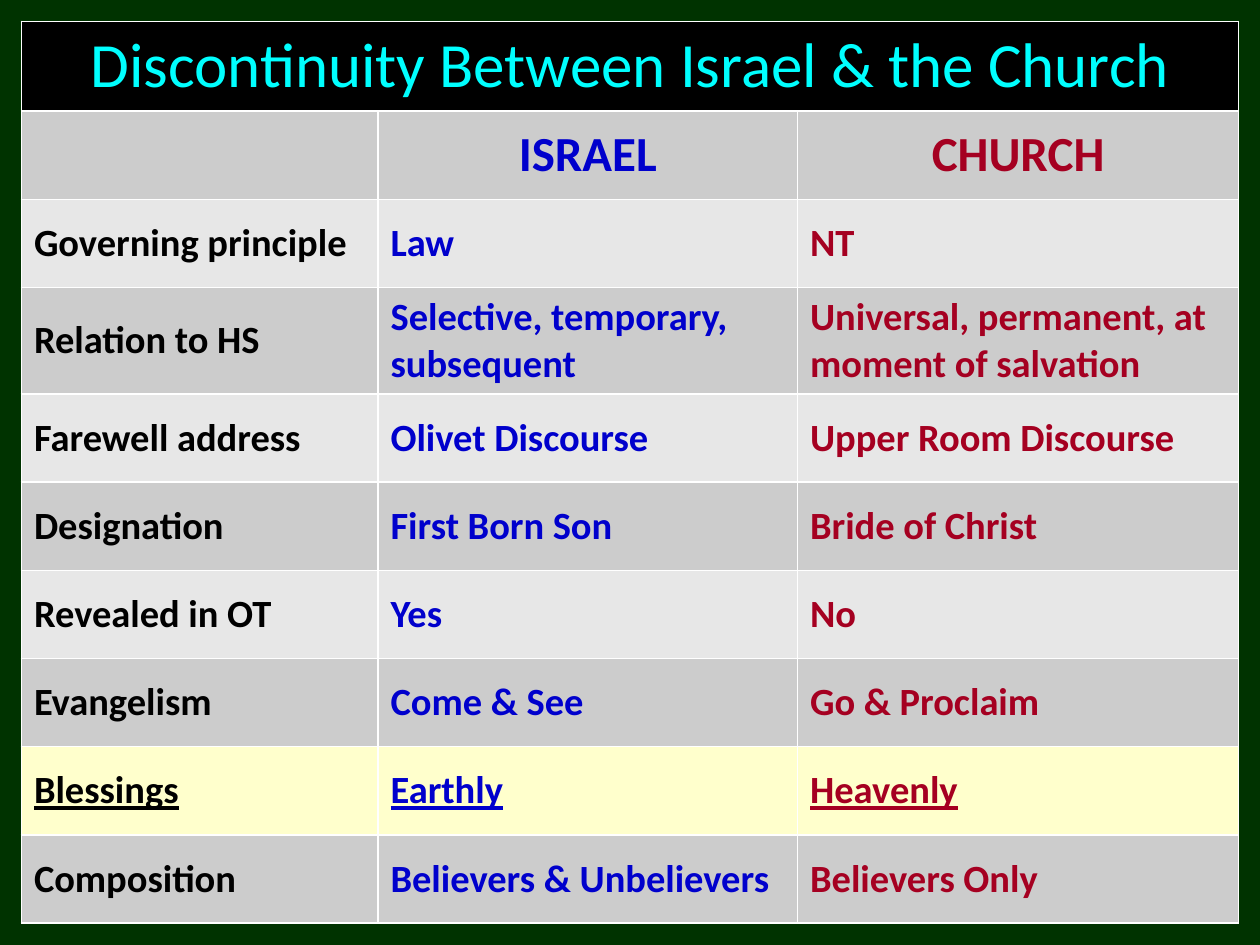
from lxml import etree
from pptx import Presentation
from pptx import util as u
from pptx.dml.color import RGBColor
from pptx.enum import text
from pptx.oxml.ns import qn

GREEN = RGBColor(0x00, 0x33, 0x00)
BLACK = RGBColor(0x00, 0x00, 0x00)
WHITE = RGBColor(0xFF, 0xFF, 0xFF)
CYAN = RGBColor(0x00, 0xFF, 0xFF)
BLUE = RGBColor(0x00, 0x00, 0xCC)
RED = RGBColor(0xA5, 0x00, 0x21)
DARK = RGBColor(0xCC, 0xCC, 0xCC)
LIGHT = RGBColor(0xE7, 0xE7, 0xE7)
CREAM = RGBColor(0xFF, 0xFF, 0xCC)

TITLE = "Discontinuity Between Israel & the Church"
ROWS = [
    ("", "ISRAEL", "CHURCH"),
    ("Governing principle", "Law", "NT"),
    ("Relation to HS", "Selective, temporary, subsequent",
     "Universal, permanent, at moment of salvation"),
    ("Farewell address", "Olivet Discourse", "Upper Room Discourse"),
    ("Designation", "First Born Son", "Bride of Christ"),
    ("Revealed in OT", "Yes", "No"),
    ("Evangelism", "Come & See", "Go & Proclaim"),
    ("Blessings", "Earthly", "Heavenly"),
    ("Composition", "Believers & Unbelievers", "Believers Only"),
]
WIDTHS = (2.83, 3.33, 3.5)
INKS = (BLACK, BLUE, RED)
HIGH, TALL = 0.7, 0.84


def write(cell, words, size=22, ink=BLACK, bold=True, under=False, mid=False):
    cell.vertical_anchor = text.MSO_ANCHOR.MIDDLE
    para = cell.text_frame.paragraphs[0]
    para.alignment = text.PP_ALIGN.CENTER if mid else text.PP_ALIGN.LEFT
    if not words:
        return
    run = para.add_run()
    run.text = words
    font = run.font
    font.name, font.size = "Calibri", u.Pt(size)
    font.bold, font.underline = bold, under
    font.color.rgb = ink


def paint(cell, fill):
    cell.fill.solid()
    cell.fill.fore_color.rgb = fill


def edge(cell, ink=WHITE, wide=1):
    props = cell._tc.get_or_add_tcPr()
    for spot, side in enumerate("LRTB"):
        line = etree.Element(qn(f"a:ln{side}"), w=str(u.Pt(wide)))
        solid = etree.SubElement(line, qn("a:solidFill"))
        etree.SubElement(solid, qn("a:srgbClr"), val=str(ink))
        props.insert(spot, line)


def shade(label, row):
    if label == "Blessings":
        return CREAM
    return LIGHT if row % 2 == 0 else DARK


def add_grid(slide):
    count = len(ROWS) + 1
    total = HIGH * (count - 1) + TALL
    grid = slide.shapes.add_table(
        count, len(WIDTHS), u.Inches(0.17), u.Inches(0.17),
        u.Inches(sum(WIDTHS)), u.Inches(total)).table
    for col, wide in zip(grid.columns, WIDTHS):
        col.width = u.Inches(wide)
    for row in grid.rows:
        row.height = u.Inches(HIGH)
    grid.rows[3].height = u.Inches(TALL)

    head = grid.cell(0, 0)
    head.merge(grid.cell(0, len(WIDTHS) - 1))
    write(head, TITLE, size=36, ink=CYAN, bold=False, mid=True)
    for col in range(len(WIDTHS)):
        paint(grid.cell(0, col), BLACK)
        edge(grid.cell(0, col))

    for row, words in enumerate(ROWS, 1):
        top = row == 1
        for col, (word, ink) in enumerate(zip(words, INKS)):
            cell = grid.cell(row, col)
            write(cell, word, size=28 if top else 22, ink=ink,
                  under=words[0] == "Blessings", mid=top)
            paint(cell, shade(words[0], row))
            edge(cell)


def main():
    deck = Presentation()
    deck.slide_width, deck.slide_height = u.Inches(10), u.Inches(7.5)
    slide = deck.slides.add_slide(deck.slide_layouts[6])
    back = slide.background.fill
    back.solid()
    back.fore_color.rgb = GREEN
    add_grid(slide)
    deck.save("out.pptx")


if __name__ == "__main__":
    main()
